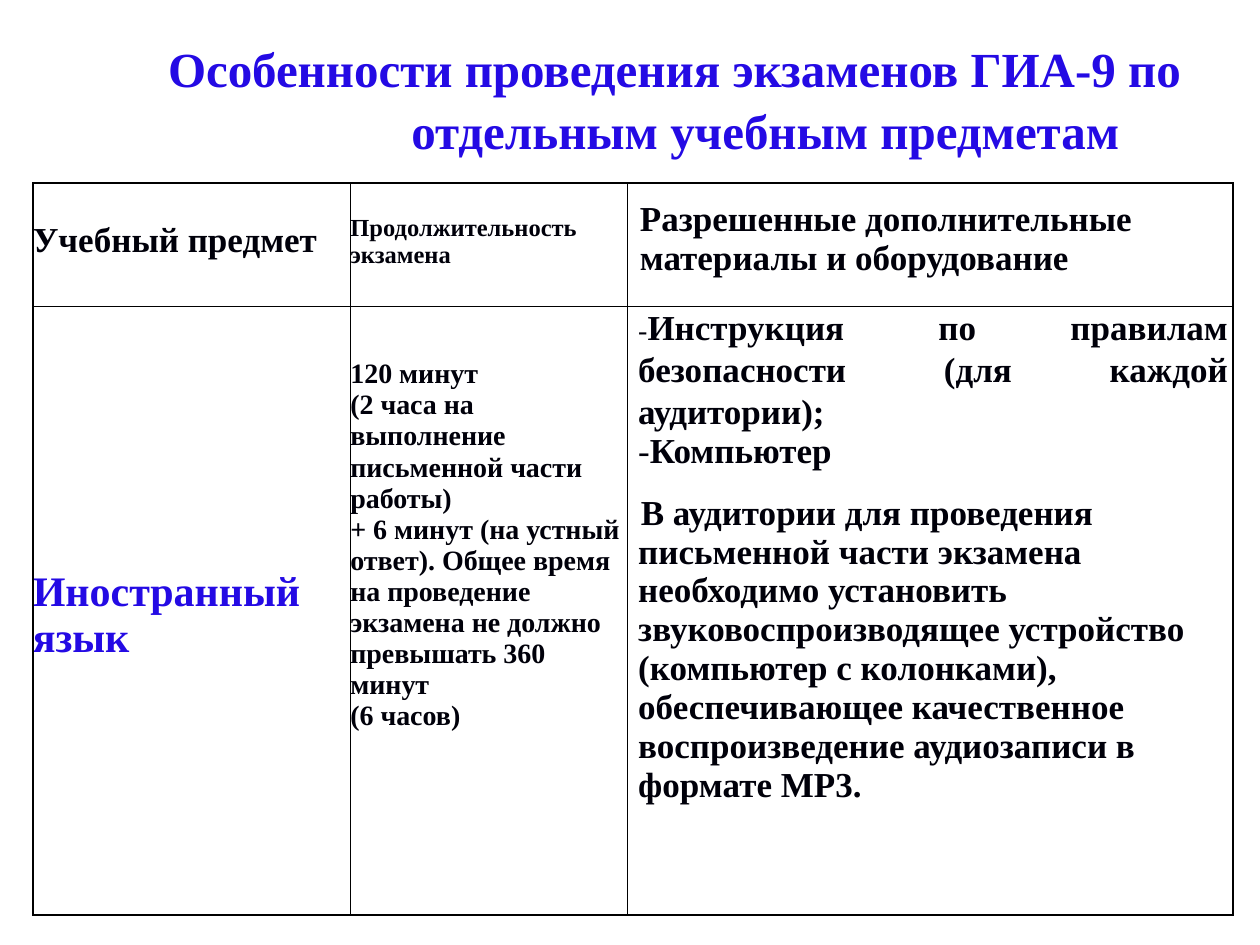
from dataclasses import dataclass

from lxml import etree
from pptx import Presentation
from pptx.dml.color import RGBColor
from pptx.enum.text import MSO_ANCHOR, PP_ALIGN
from pptx.oxml.ns import qn
from pptx.util import Pt

TOP = MSO_ANCHOR.TOP
LEFT, JUSTIFY = PP_ALIGN.LEFT, PP_ALIGN.JUSTIFY
TITLE_ONLY = 5


@dataclass(frozen=True)
class Theme:
    font: str = "Times New Roman"
    accent: str = "240AE4"
    ink: str = "00000A"
    border: str = "000000"
    title: float = 28
    subject: float = 24
    body: float = 20
    duration: float = 16
    small: float = 14


THEME = Theme()


@dataclass(frozen=True)
class Para:
    text: str
    size: float = THEME.body
    color: str = THEME.ink
    dash: float = 0  # size of a light dash before the text
    left: float = 0
    first: float = 0
    before: float = 0
    line: float = 0
    align: PP_ALIGN = LEFT


def add_run(p, text, size, color, bold=True):
    r = p.add_run()
    r.text = text
    r.font.name = THEME.font
    r.font.size = Pt(size)
    r.font.bold = bold
    r.font.color.rgb = RGBColor.from_string(color)


def set_indent(p, left, first):
    pPr = p._p.get_or_add_pPr()
    pPr.set("marL", str(Pt(left)))
    pPr.set("indent", str(Pt(first)))


def fill_text(tf, paras):
    for i, item in enumerate(paras):
        p = tf.paragraphs[0] if i == 0 else tf.add_paragraph()
        p.alignment = item.align
        set_indent(p, item.left, item.first)
        if item.before:
            p.space_before = Pt(item.before)
        if item.line:
            p.line_spacing = Pt(item.line)
        if item.dash:
            add_run(p, "-", item.dash, item.color, bold=False)
        add_run(p, item.text, item.size, item.color)


def set_borders(cell):
    tcPr = cell._tc.get_or_add_tcPr()
    for i, side in enumerate(("lnL", "lnR", "lnT", "lnB")):
        ln = etree.Element(qn("a:" + side), w=str(Pt(1)))
        fill = etree.SubElement(ln, qn("a:solidFill"))
        etree.SubElement(fill, qn("a:srgbClr"), val=THEME.border)
        tcPr.insert(i, ln)


def add_title(s, text):
    sp = s.shapes.title
    sp.left, sp.top, sp.width, sp.height = Pt(96), Pt(19.5), Pt(583), Pt(69)
    tf = sp.text_frame
    tf.word_wrap = True
    tf.vertical_anchor = TOP
    tf.margin_left = tf.margin_right = tf.margin_bottom = 0
    tf.margin_top = Pt(1)
    hanging = 139
    fill_text(tf, [Para(text, THEME.title, THEME.accent, left=hanging, first=-hanging)])
    tf.paragraphs[0].line_spacing = 1.05


def add_grid(s, widths, heights, rows):
    """Each cell is a pair: top margin and paragraphs."""
    frame = s.shapes.add_table(len(heights), len(widths), Pt(18.75), Pt(104.5),
                               Pt(sum(widths)), Pt(sum(heights)))
    table = frame.table
    table.first_row = table.horz_banding = False
    for col, width in zip(table.columns, widths):
        col.width = Pt(width)
    for row, height, cells in zip(table.rows, heights, rows):
        row.height = Pt(height)
        for cell, (top, paras) in zip(row.cells, cells):
            cell.fill.background()
            cell.vertical_anchor = TOP
            cell.margin_left = cell.margin_bottom = 0
            cell.margin_right = Pt(3)
            cell.margin_top = Pt(top)
            set_borders(cell)
            fill_text(cell.text_frame, paras)


def main():
    prs = Presentation()
    prs.slide_width, prs.slide_height = Pt(720), Pt(540)
    s = prs.slides.add_slide(prs.slide_layouts[TITLE_ONLY])
    add_title(s, "Особенности проведения экзаменов ГИА-9 по отдельным учебным предметам")

    header = [
        (22, [Para("Учебный предмет")]),
        (18, [Para("Продолжительность экзамена", THEME.small)]),
        (10, [Para("Разрешенные дополнительные материалы и оборудование", left=7)]),
    ]
    duration = [
        "120 минут",
        "(2 часа на выполнение письменной части работы)",
        "+ 6 минут (на устный ответ). Общее время на проведение экзамена "
        "не должно превышать 360 минут",
        "(6 часов)",
    ]
    materials = [
        Para("Инструкция по правилам безопасности (для каждой аудитории);",
             dash=THEME.duration, left=6, line=24, align=JUSTIFY),
        Para("Компьютер", dash=THEME.body, left=6, line=22.2),
        Para("В аудитории для проведения письменной части экзамена необходимо "
             "установить звуковоспроизводящее устройство (компьютер с колонками), "
             "обеспечивающее качественное воспроизведение аудиозаписи в формате МР3.",
             left=6, first=1.5, before=13),
    ]
    subject = [
        (150, [Para("Иностранный язык", THEME.subject, THEME.accent)]),
        (30, [Para(text, THEME.duration) for text in duration]),
        (0, materials),
    ]
    add_grid(s, (181.5, 158.5, 346), (70.5, 348), (header, subject))
    prs.save("out.pptx")


if __name__ == "__main__":
    main()
